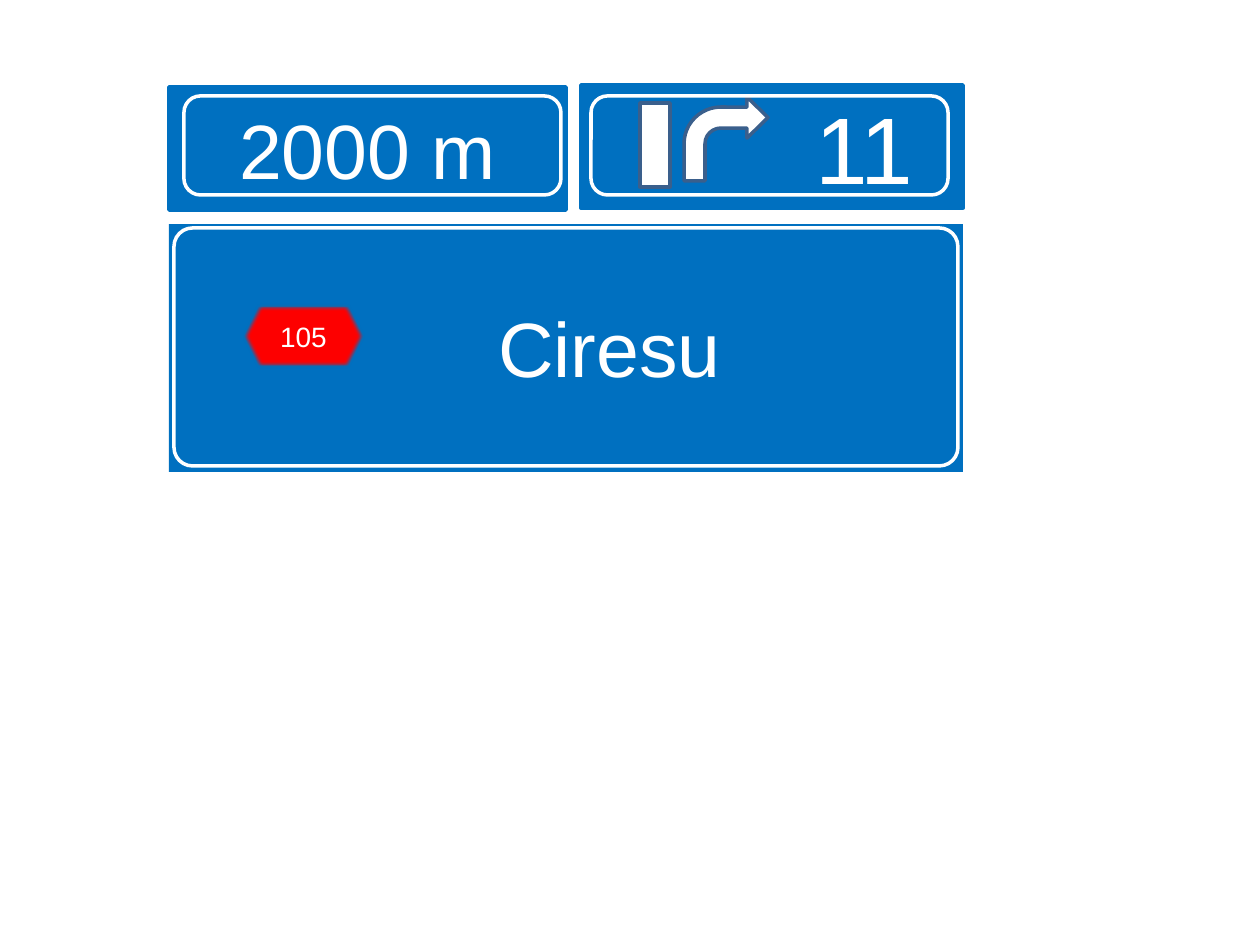
import dataclasses

import pptx
import pptx.dml.color
import pptx.enum.shapes
import pptx.enum.text
import pptx.oxml
import pptx.oxml.ns
import pptx.util

EMU_PER_PX = 914400 / 126
SHAPES = pptx.enum.shapes.MSO_SHAPE


@dataclasses.dataclass(frozen=True)
class Theme:
    font: str = "Arial"
    panel: str = "0070C0"
    white: str = "FFFFFF"
    outline: str = "3A5F8C"
    badge: str = "FF0000"
    line_width: int = 2
    road_size: int = 16
    sign_size: int = 44
    exit_size: int = 54


def px(length):
    return pptx.util.Emu(round(length * EMU_PER_PX))


def rgb(color):
    return pptx.dml.color.RGBColor.from_string(color)


def write_text(shape, text, *, font, size, color, left=13, bottom=6):
    frame = shape.text_frame
    frame.word_wrap = True
    frame.vertical_anchor = pptx.enum.text.MSO_ANCHOR.MIDDLE
    frame.margin_left, frame.margin_right = px(left), px(13)
    frame.margin_top, frame.margin_bottom = px(6), px(bottom)
    paragraph = frame.paragraphs[0]
    paragraph.alignment = pptx.enum.text.PP_ALIGN.CENTER
    run = paragraph.add_run()
    run.text = text
    run.font.name = font
    run.font.size = pptx.util.Pt(size)
    run.font.color.rgb = rgb(color)


class SignBuilder:
    def __init__(self, slide, theme):
        self.slide = slide
        self.theme = theme

    def shape(self, kind, box, fill=None, line=None, adjustments=()):
        shape = self.slide.shapes.add_shape(kind, *map(px, box))
        shape.shadow.inherit = False
        for index, value in enumerate(adjustments):
            shape.adjustments[index] = value
        if fill:
            shape.fill.solid()
            shape.fill.fore_color.rgb = rgb(fill)
        else:
            shape.fill.background()
        if line:
            shape.line.color.rgb = rgb(line)
            shape.line.width = pptx.util.Pt(self.theme.line_width)
        else:
            shape.line.fill.background()
        return shape

    def label(self, shape, text, size, **layout):
        write_text(shape, text, font=self.theme.font, size=size,
                   color=self.theme.white, **layout)

    def top_panel(self, box, text, size, **layout):
        panel = self.shape(SHAPES.ROUNDED_RECTANGLE, box, self.theme.panel,
                           self.theme.panel, [0])
        self.label(panel, text, size, **layout)

    def destination_panel(self, box, text):
        panel = self.shape(SHAPES.RECTANGLE, box, self.theme.panel)
        self.label(panel, text, self.theme.sign_size, left=100, bottom=79)
        panel.text_frame.vertical_anchor = pptx.enum.text.MSO_ANCHOR.BOTTOM

    def symbol(self, kind, box, adjustments=()):
        self.shape(kind, box, self.theme.white, self.theme.outline, adjustments)

    def road_badge(self, box, text):
        badge = self.shape(SHAPES.HEXAGON, box, self.theme.badge, self.theme.outline)
        self.label(badge, text, self.theme.road_size)
        effects = badge.element.spPr.find(pptx.oxml.ns.qn("a:effectLst"))
        effects.append(pptx.oxml.parse_xml(
            f'<a:softEdge {pptx.oxml.ns.nsdecls("a")} rad="31750"/>'))

    def border(self, box, adjustments=()):
        self.shape(SHAPES.ROUNDED_RECTANGLE, box, line=self.theme.white,
                   adjustments=adjustments)


def main():
    presentation = pptx.Presentation()
    presentation.slide_width = px(1260)
    presentation.slide_height = px(945)
    slide = presentation.slides.add_slide(presentation.slide_layouts[6])
    theme = Theme()
    sign = SignBuilder(slide, theme)

    sign.top_panel((169, 87, 397, 123), "2000 m", theme.sign_size)
    sign.top_panel((581, 85, 382, 123), "11", theme.exit_size, left=198)
    sign.symbol(SHAPES.RECTANGLE, (640, 103, 30, 84))
    sign.symbol(SHAPES.BENT_ARROW, (684, 97, 84, 84), [0.25, 0.245, 0.25, 0.438])
    sign.destination_panel((169, 224, 794, 248), "Ciresu")
    sign.road_badge((242, 305, 123, 62), "105")
    sign.border((174, 228, 784, 238), [0.078])
    for left, width in ((591, 357), (184, 377)):
        sign.border((left, 96, width, 99))

    presentation.save("out.pptx")


if __name__ == "__main__":
    main()
